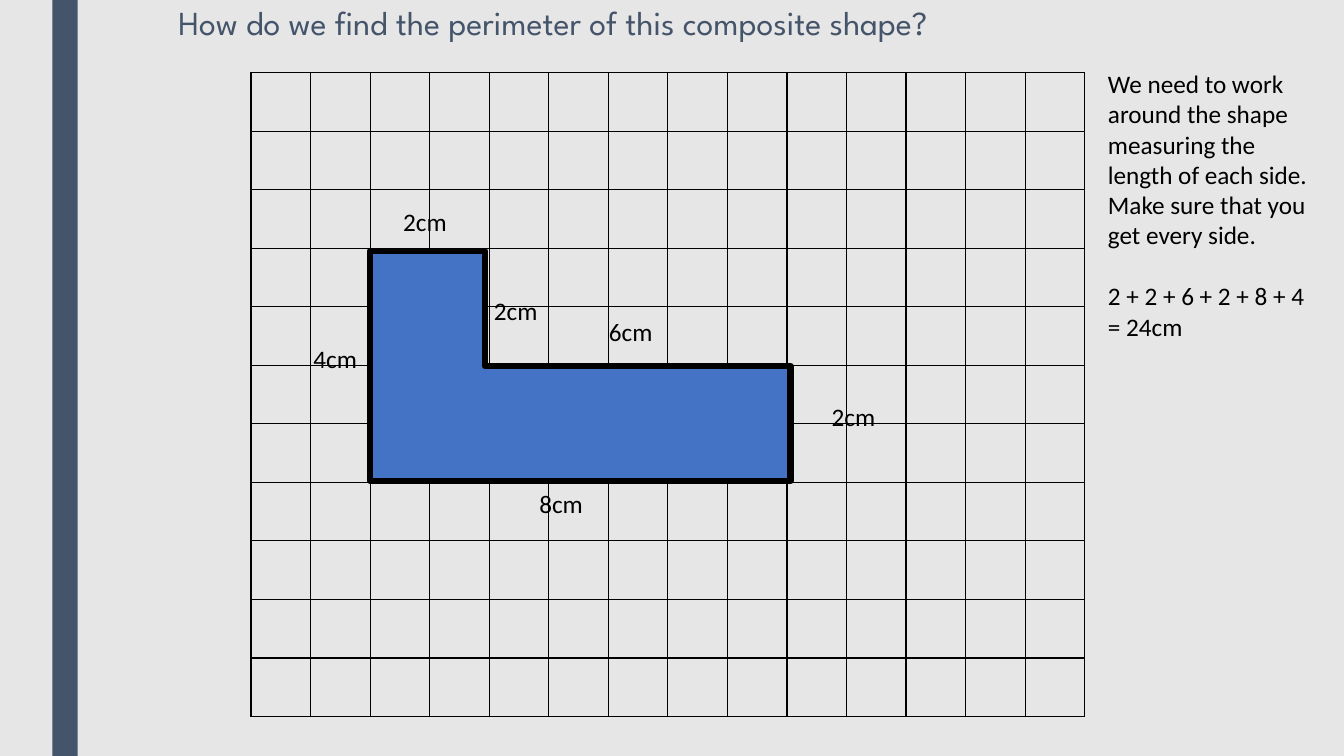
from lxml import etree
from pptx import Presentation
from pptx.dml.color import RGBColor
from pptx.enum.shapes import MSO_SHAPE as SHAPE
from pptx.enum.text import MSO_ANCHOR as ANCHOR
from pptx.oxml.ns import qn
from pptx.util import Inches, Pt

COLORS = {"back": "E7E6E6", "slate": "44546A", "blue": "4472C4", "ink": "000000"}

TITLE = "How do we find the perimeter of this composite shape?"
NOTES = [  # text, space before in points
    ("We need to work around the shape measuring the length of each side.", 0),
    ("Make sure that you get every side.", 0),
    ("2 + 2 + 6 + 2 + 8 + 4 = 24cm", 22),
]
SIDES = [  # label, left, top
    ("2cm", 8.15, 3.93),
    ("6cm", 5.94, 3.09),
    ("2cm", 4.8, 2.88),
    ("2cm", 3.9, 2),
    ("8cm", 5.25, 4.8),
    ("4cm", 3.01, 3.36),
]
LABEL_SIZE = (0.68, 0.4)
COLS, ROWS = 14, 11
GRID = (2.49, 0.72, 8.27, 6.39)
TITLE_FORMAT = {"size": Pt(24), "name": "League Spartan"}
BODY_FORMAT = {"size": Pt(18), "name": "Calibri"}


def rgb(name):
    return RGBColor.from_string(COLORS[name])


def inches(*values):
    return [Inches(v) for v in values]


def add_text(slide, box, lines, fmt, color, **spacing):
    tf = slide.shapes.add_textbox(*inches(*box)).text_frame
    tf.word_wrap = True
    tf.vertical_anchor = ANCHOR.TOP
    for i, (text, before) in enumerate(lines):
        p = tf.paragraphs[0] if i == 0 else tf.add_paragraph()
        p.space_before = Pt(before)
        for key, value in spacing.items():
            setattr(p, key, value)
        r = p.add_run()
        r.text = text
        for key, value in fmt.items():
            setattr(r.font, key, value)
        r.font.color.rgb = rgb(color)


def add_block(slide, kind, box, fill, line=None):
    sp = slide.shapes.add_shape(kind, *inches(*box))
    sp.shadow.inherit = False
    sp.fill.solid()
    sp.fill.fore_color.rgb = rgb(fill)
    if line:
        sp.line.color.rgb = rgb("ink")
        sp.line.width = Pt(line)
    else:
        sp.line.fill.background()


def set_borders(cell):
    tc_pr = cell._tc.get_or_add_tcPr()
    for i, side in enumerate(("lnL", "lnR", "lnT", "lnB")):
        ln = etree.Element(qn("a:" + side), w=str(Pt(1)))
        fill = etree.SubElement(ln, qn("a:solidFill"))
        etree.SubElement(fill, qn("a:srgbClr"), val=COLORS["ink"])
        tc_pr.insert(i, ln)


def add_grid(slide):
    table = slide.shapes.add_table(ROWS, COLS, *inches(*GRID)).table
    table.first_row = table.horz_banding = False
    for col in table.columns:
        col.width = Inches(GRID[2] / COLS)
    for row in table.rows:
        row.height = Inches(GRID[3] / ROWS)
    for cell in table.iter_cells():
        cell.fill.background()
        set_borders(cell)


def main():
    prs = Presentation()
    prs.slide_width, prs.slide_height = inches(13.33, 7.5)
    slide = prs.slides.add_slide(prs.slide_layouts[6])
    slide.background.fill.solid()
    slide.background.fill.fore_color.rgb = rgb("back")

    # Side bar and title
    add_block(slide, SHAPE.RECTANGLE, (0.52, 0, 0.25, 7.5), "slate")
    add_text(slide, (1.67, 0, 10, 1.78), [(TITLE, 10)], TITLE_FORMAT, "slate",
             line_spacing=0.94, space_after=Pt(2))

    # Centimetre grid with the L-shape on it
    add_grid(slide)
    add_block(slide, SHAPE.CORNER, (3.67, 2.49, 4.17, 2.28), "blue", 4.5)

    # Explanation and side lengths
    add_text(slide, (10.89, 0.63, 2.25, 3.74), NOTES, BODY_FORMAT, "ink")
    for label, left, top in SIDES:
        add_text(slide, (left, top, *LABEL_SIZE), [(label, 0)], BODY_FORMAT, "ink")

    prs.save("out.pptx")


if __name__ == "__main__":
    main()
